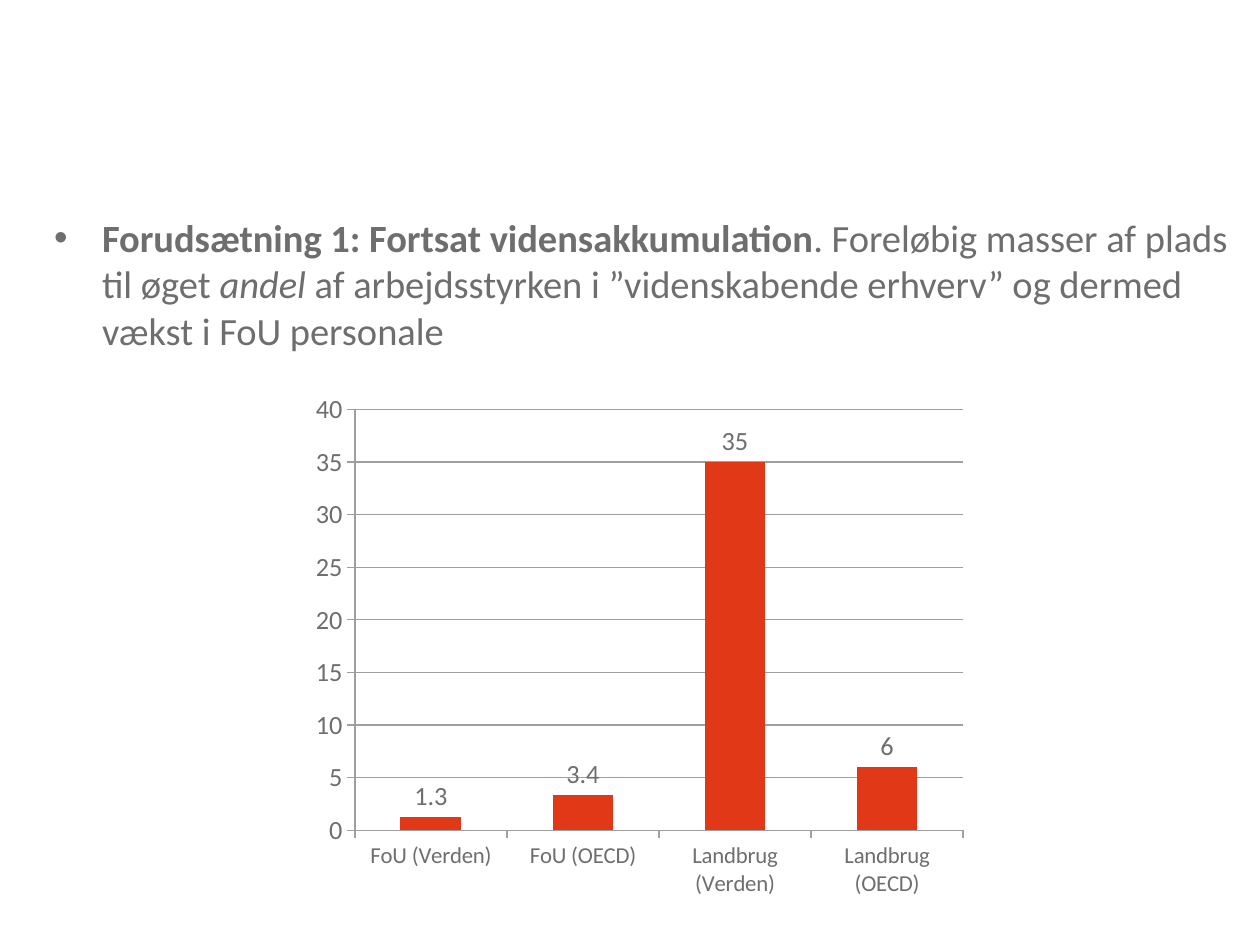
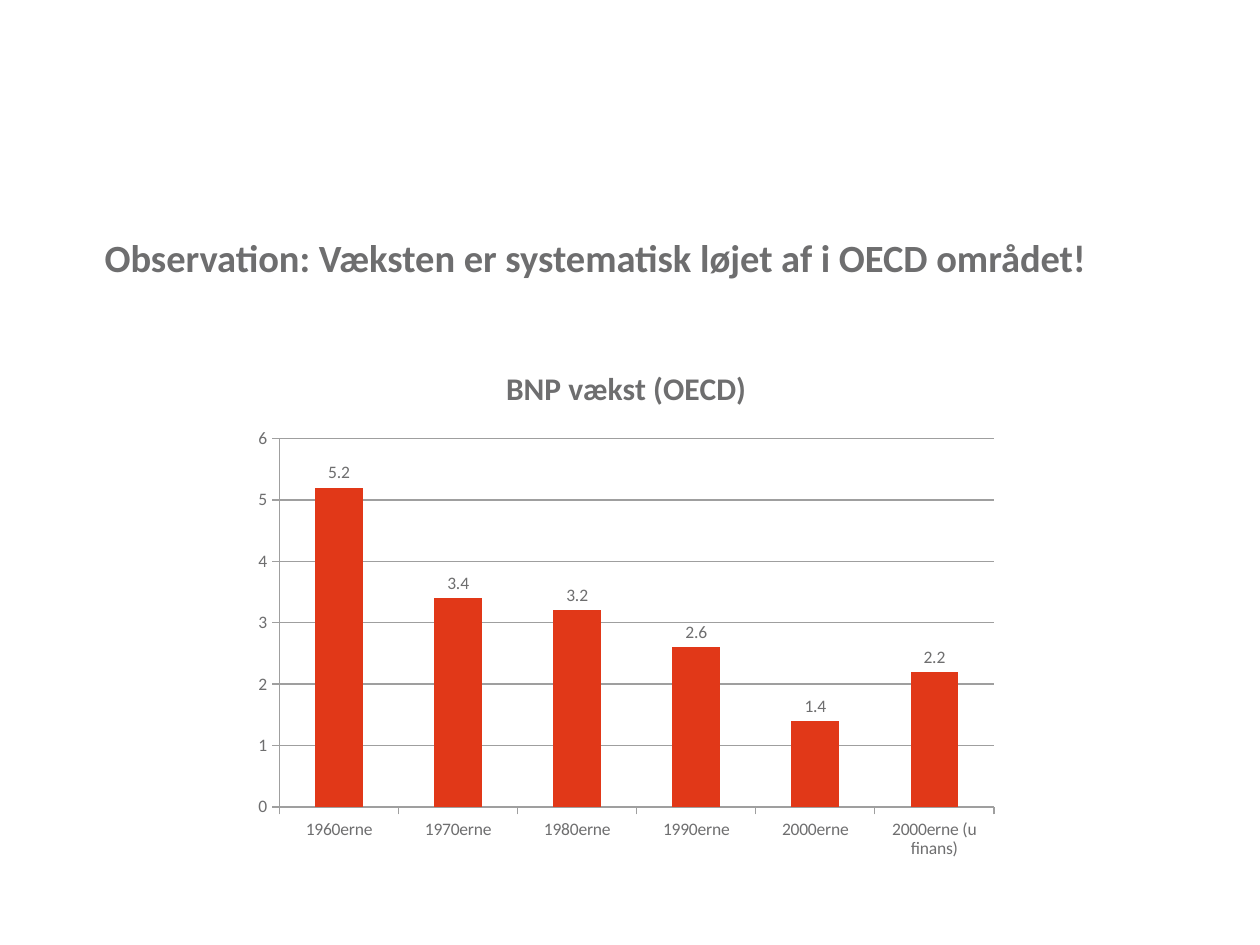
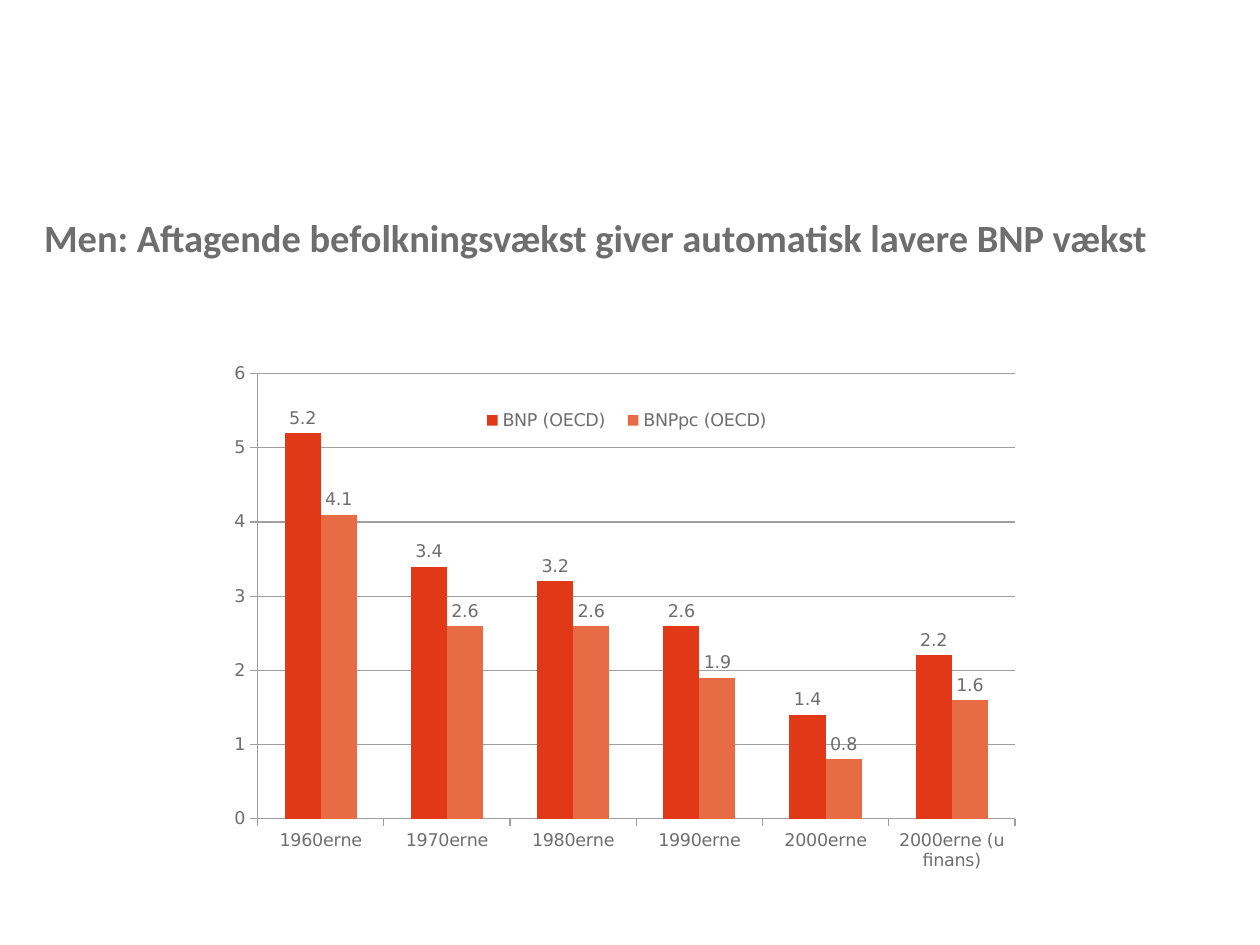
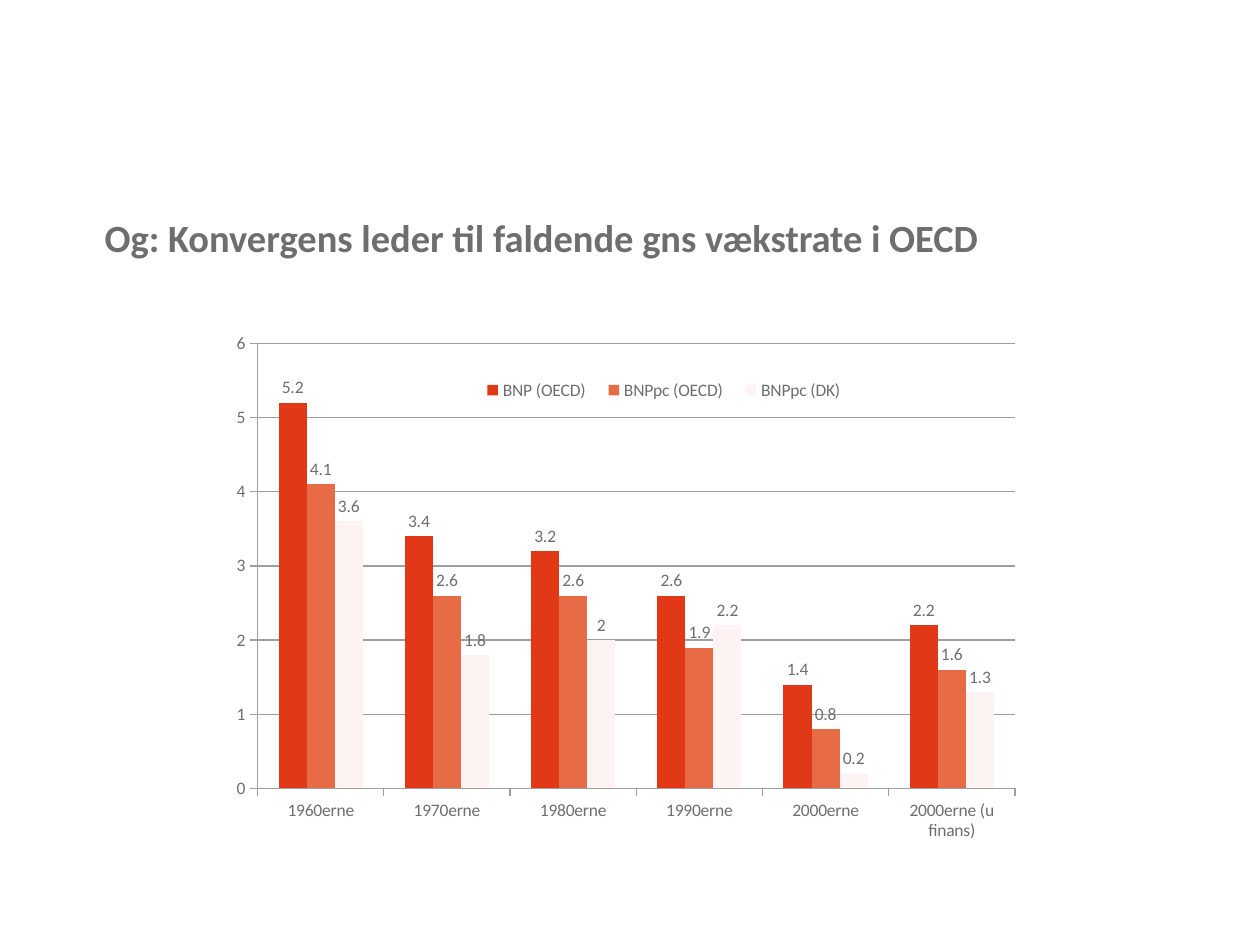
"""Build four slides on growth in the OECD, each a statement above a column chart."""
from dataclasses import dataclass

import pptx
import pptx.chart.data
import pptx.dml.color
import pptx.enum.chart
import pptx.enum.text
import pptx.oxml
import pptx.oxml.ns
import pptx.util

Inches = pptx.util.Inches
Pt = pptx.util.Pt
RGB = pptx.dml.color.RGBColor
kinds = pptx.enum.chart


@dataclass(frozen=True)
class Theme:
    face: str = "Calibri"
    alt: str = "DejaVu Sans"
    ink: RGB = RGB(0x6E, 0x6E, 0x6F)
    grid: RGB = RGB(0x9F, 0x9F, 0x9F)
    bars: tuple = (RGB(0xE1, 0x38, 0x18), RGB(0xE7, 0x6C, 0x46), RGB(0xFD, 0xF3, 0xF2))
    body: Pt = Pt(22)
    head: Pt = Pt(18)
    large: Pt = Pt(15)
    mid: Pt = Pt(13)
    small: Pt = Pt(10)
    indent: Inches = Inches(0.38)


def apply(item, values):
    for name, value in values.items():
        setattr(item, name, value)


def place(item, box):
    apply(item, dict(zip(("left", "top", "width", "height"), map(Inches, box))))


def layout(parts, inner=False):
    tags = [("layoutTarget", "inner")] if inner else []
    tags += [("xMode", "edge"), ("yMode", "edge"), *zip("xywh", parts)]
    body = "".join(f'<c:{tag} val="{value}"/>' for tag, value in tags)
    space = pptx.oxml.ns.nsdecls("c")
    return pptx.oxml.parse_xml(
        f"<c:layout {space}><c:manualLayout>{body}</c:manualLayout></c:layout>")


def move(owner, after, parts, inner=False):
    for old in owner.findall(pptx.oxml.ns.qn("c:layout")):
        owner.remove(old)
    fresh = layout(parts, inner)
    if after is None:
        owner.insert(0, fresh)
    else:
        after.addnext(fresh)


class Deck:
    def __init__(self, theme):
        self.theme = theme
        self.show = pptx.Presentation()
        apply(self.show, {"slide_width": Inches(10), "slide_height": Inches(7.5)})
        self.slide = None

    def add(self):
        self.slide = self.show.slides.add_slide(self.show.slide_layouts[1])
        title = self.slide.shapes.title._element
        title.getparent().remove(title)

    def font(self, font, size, **extra):
        apply(font, {"name": self.theme.face, "size": size, **extra})
        font.color.rgb = self.theme.ink

    def text(self, box, runs, bullet=False):
        body = self.slide.placeholders[1]
        place(body, box)
        frame = body.text_frame
        apply(frame, {
            "margin_left": 0, "margin_top": 0, "margin_right": 0, "margin_bottom": 0,
            "word_wrap": True, "auto_size": pptx.enum.text.MSO_AUTO_SIZE.NONE,
            "vertical_anchor": pptx.enum.text.MSO_ANCHOR.TOP,
        })
        para = frame.paragraphs[0]
        para.space_before = Pt(0)
        props = para._p.get_or_add_pPr()
        props.set("marL", str(self.theme.indent))
        props.set("indent", str(-self.theme.indent))
        mark = 'buChar {} char="•"' if bullet else "buNone {}"
        props.append(pptx.oxml.parse_xml(f"<a:{mark.format(pptx.oxml.ns.nsdecls('a'))}/>"))
        for words, style in runs:
            run = para.add_run()
            run.text = words
            self.font(run.font, self.theme.body, **{"bold": False, "italic": False, **style})

    def chart(self, box, cats, rows, size, face=None, title=None, label=None):
        data = pptx.chart.data.CategoryChartData()
        data.categories = cats
        for name, values in rows.items():
            data.add_series(name, values)
        frame = self.slide.shapes.add_chart(
            kinds.XL_CHART_TYPE.COLUMN_CLUSTERED, *map(Inches, box), data)
        chart = frame.chart
        apply(chart, {"has_title": title is not None, "has_legend": False})
        self.font(chart.font, size, name=face or self.theme.face)
        if title:
            chart.chart_title.text_frame.text = title
            run = chart.chart_title.text_frame.paragraphs[0].runs[0]
            self.font(run.font, self.theme.head, bold=True)
        for axis in (chart.category_axis, chart.value_axis):
            apply(axis, {"major_tick_mark": kinds.XL_TICK_MARK.OUTSIDE,
                         "minor_tick_mark": kinds.XL_TICK_MARK.NONE})
            self.line(axis.format.line)
        chart.value_axis.has_major_gridlines = True
        self.line(chart.value_axis.major_gridlines.format.line)
        if label:
            self.font(chart.category_axis.tick_labels.font, label)
        plot = chart.plots[0]
        apply(plot, {"gap_width": 150, "overlap": 0, "vary_by_categories": False,
                     "has_data_labels": True})
        apply(plot.data_labels, {"show_value": True,
                                 "position": kinds.XL_LABEL_POSITION.OUTSIDE_END})
        for series, color in zip(plot.series, self.theme.bars):
            series.invert_if_negative = False
            series.format.fill.solid()
            series.format.fill.fore_color.rgb = color
        return chart

    def line(self, line):
        line.color.rgb = self.theme.grid
        line.width = Pt(0.75)

    def legend(self, chart, width):
        chart.has_legend = True
        apply(chart.legend, {"position": kinds.XL_LEGEND_POSITION.RIGHT,
                             "include_in_layout": False})
        root = chart.legend._element
        move(root, root.find(pptx.oxml.ns.qn("c:legendPos")), (0.3, 0.1, width, 0.05))
        area = chart._chartSpace.chart.plotArea
        move(area, None, (0.042, 0.037, 0.919, 0.837), inner=True)


def main():
    theme = Theme()
    deck = Deck(theme)
    bold = {"bold": True}
    eras = [f"{year}erne" for year in range(1960, 2001, 10)] + ["2000erne (u finans)"]
    gross = [5.2, 3.4, 3.2, 2.6, 1.4, 2.2]
    pair = {"BNP (OECD)": gross, "BNPpc (OECD)": [4.1, 2.6, 2.6, 1.9, 0.8, 1.6]}
    trio = {**pair, "BNPpc (DK)": [3.6, 1.8, 2, 2.2, 0.2, 1.3]}

    deck.add()
    deck.text((0.43, 1.7, 9.45, 1.89), [
        ("Forudsætning 1: Fortsat vidensakkumulation", bold),
        (". Foreløbig masser af plads til øget ", {}),
        ("andel", {"italic": True}),
        (" af arbejdsstyrken i ”videnskabende erhverv” og dermed vækst i FoU personale", {}),
    ], bullet=True)
    fields = [f"{field} ({area})" for field in ("FoU", "Landbrug") for area in ("Verden", "OECD")]
    deck.chart((2.4, 3.04, 5.35, 4.17), fields, {"Series 1": [1.3, 3.4, 35, 6]},
               theme.large, label=theme.mid)

    deck.add()
    deck.text((0.83, 1.86, 8.98, 3.83),
              [("Observation: Væksten er systematisk løjet af i OECD området!", bold)])
    deck.chart((1.93, 2.73, 6.08, 4.17), eras, {"Series 1": gross}, theme.small,
               title="BNP vækst (OECD)")

    for box, words, top, rows, face, width in (
        ((0.35, 1.7, 9.13, 0.55),
         "Men: Aftagende befolkningsvækst giver automatisk lavere BNP vækst",
         2.81, pair, theme.alt, 0.38),
        ((0.83, 1.7, 8.43, 0.55),
         "Og: Konvergens leder til faldende gns vækstrate i OECD",
         2.57, trio, theme.face, 0.47),
    ):
        deck.add()
        deck.text(box, [(words, bold)])
        chart = deck.chart((1.77, top, 6.54, 4.22), eras, rows, theme.small, face)
        deck.legend(chart, width)

    deck.show.save("out.pptx")


if __name__ == "__main__":
    main()
